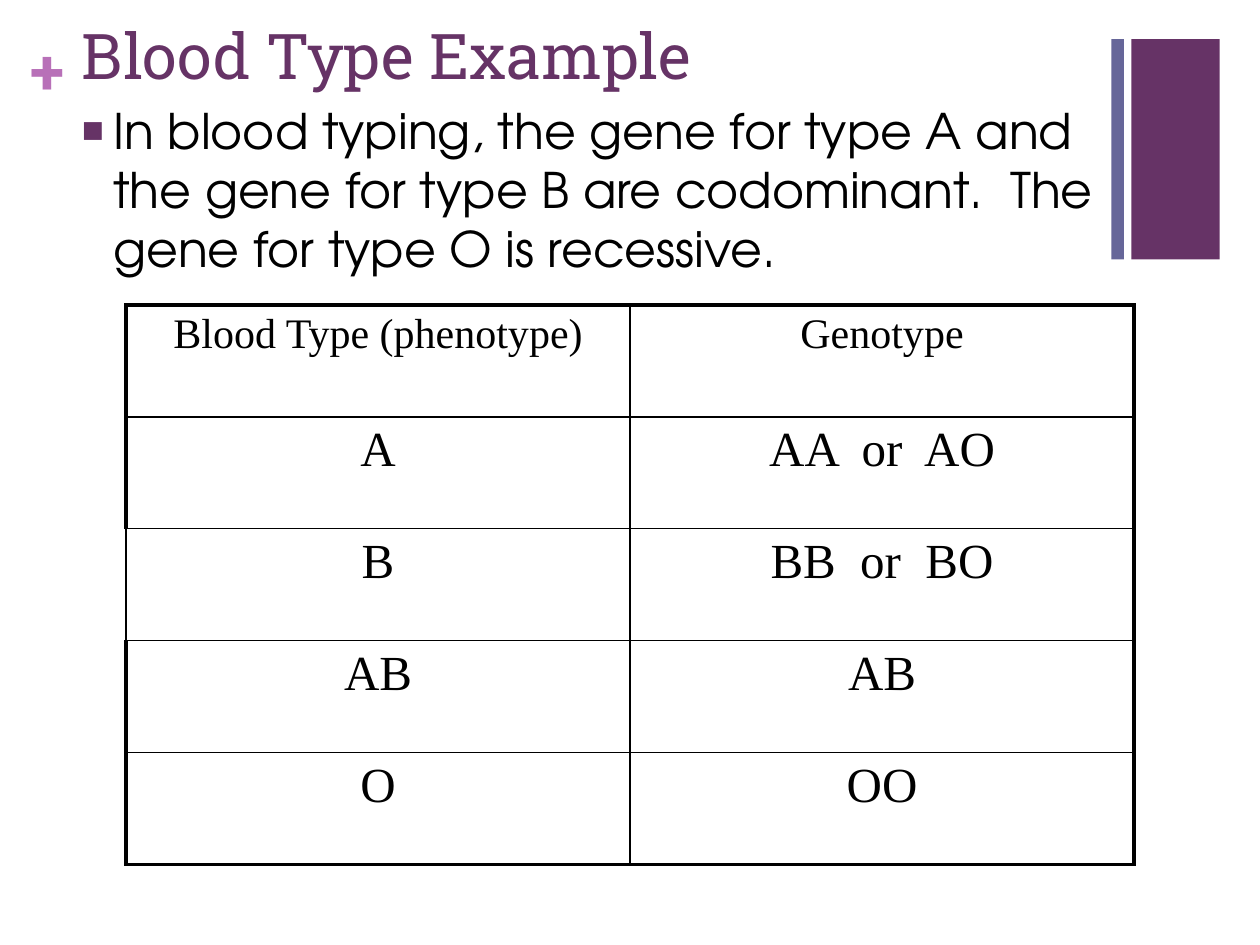
from lxml import etree
from pptx import Presentation
from pptx.dml.color import RGBColor
from pptx.enum.shapes import MSO_SHAPE
from pptx.enum.text import MSO_ANCHOR, MSO_AUTO_SIZE, PP_ALIGN
from pptx.oxml.ns import qn
from pptx.util import Inches, Pt

PURPLE, SLATE, ORCHID, BLACK = "663366", "666699", "B870B8", "000000"
HEADING_FONT, BODY_FONT, TABLE_FONT = "Roboto Slab", "TeX Gyre Adventor", "Times New Roman"
THIN, THICK = 1, 2.25

BLOOD_TYPES = [
    ("Blood Type (phenotype)", "Genotype"),
    ("A", "AA  or  AO"),
    ("B", "BB  or  BO"),
    ("AB", "AB"),
    ("O", "OO"),
]


def color(hex_value):
    return RGBColor.from_string(hex_value)


def write(frame, text, *, size, font, fill=BLACK, bold=False,
          align=PP_ALIGN.LEFT, before=0):
    frame.word_wrap = True
    paragraph = frame.paragraphs[0]
    paragraph.alignment = align
    paragraph.space_before = Pt(before)
    run = paragraph.add_run()
    run.text = text
    run.font.size = Pt(size)
    run.font.name = font
    run.font.bold = bold
    run.font.color.rgb = color(fill)
    return paragraph


def place(part, left, top, width, height):
    part.left, part.top = Inches(left), Inches(top)
    part.width, part.height = Inches(width), Inches(height)


def add_square_bullet(paragraph, hex_value, percent, indent):
    properties = paragraph._p.get_or_add_pPr()
    properties.set("marL", str(Inches(indent)))
    properties.set("indent", str(-Inches(indent)))
    bullet_color = etree.SubElement(properties, qn("a:buClr"))
    etree.SubElement(bullet_color, qn("a:srgbClr"), val=hex_value)
    etree.SubElement(properties, qn("a:buSzPct"), val=str(percent * 1000))
    etree.SubElement(properties, qn("a:buChar"), char="■")


def set_borders(cell, **widths):
    properties = cell._tc.get_or_add_tcPr()
    for position, side in enumerate("LRTB"):
        line = etree.Element(qn(f"a:ln{side}"), w=str(Pt(widths[side])))
        fill = etree.SubElement(line, qn("a:solidFill"))
        etree.SubElement(fill, qn("a:srgbClr"), val=BLACK)
        properties.insert(position, line)


def add_corner_bars(slide, left, top, width, height):
    # Narrow slate bar, then the wide purple one
    for offset, bar_width, fill in ((0, 0.1, SLATE), (0.16, width - 0.16, PURPLE)):
        bar = slide.shapes.add_shape(
            MSO_SHAPE.RECTANGLE, Inches(left + offset), Inches(top),
            Inches(bar_width), Inches(height))
        bar.shadow.inherit = False
        bar.fill.solid()
        bar.fill.fore_color.rgb = color(fill)
        bar.line.fill.background()


def add_plus_sign(slide, left, top, width, height):
    plus = slide.shapes.add_textbox(
        Inches(left), Inches(top), Inches(width), Inches(height)).text_frame
    plus.margin_left = plus.margin_right = plus.margin_top = plus.margin_bottom = 0
    write(plus, "+", size=36, font=HEADING_FONT, fill=ORCHID, bold=True)


def fill_heading(slide, left, top, width, height):
    heading = slide.shapes.title
    place(heading, left, top, width, height)
    frame = heading.text_frame
    frame.auto_size = MSO_AUTO_SIZE.NONE
    frame.vertical_anchor = MSO_ANCHOR.TOP
    write(frame, "Blood Type Example", size=36, font=HEADING_FONT, fill=PURPLE)


def fill_explanation(slide, left, top, width, height):
    explanation = slide.placeholders[1]
    place(explanation, left, top, width, height)
    frame = explanation.text_frame
    frame.auto_size = MSO_AUTO_SIZE.NONE
    paragraph = write(
        frame,
        "In blood typing, the gene for type A and the gene for type B are "
        "codominant.  The gene for type O is recessive.",
        size=28, font=BODY_FONT, before=20)
    add_square_bullet(paragraph, PURPLE, percent=75, indent=0.25)


def add_genotype_table(slide, left, top, width, height):
    row_count, column_count = len(BLOOD_TYPES), len(BLOOD_TYPES[0])
    table = slide.shapes.add_table(
        row_count, column_count, Inches(left), Inches(top),
        Inches(width), Inches(height)).table
    table.first_row = table.horz_banding = False
    for r, row in enumerate(BLOOD_TYPES):
        size = 24 if r == 0 else 28
        for c, text in enumerate(row):
            cell = table.cell(r, c)
            cell.fill.background()
            write(cell.text_frame, text, size=size, font=TABLE_FONT,
                  align=PP_ALIGN.CENTER, before=size * 0.2)
            # Thick outer frame, except left of the type B row
            set_borders(
                cell,
                L=THICK if c == 0 and row[0] != "B" else THIN,
                R=THICK if c == column_count - 1 else THIN,
                T=THICK if r == 0 else THIN,
                B=THICK if r == row_count - 1 else THIN)


def main():
    deck = Presentation()
    deck.slide_width, deck.slide_height = Inches(10), Inches(7.5)
    slide = deck.slides.add_slide(deck.slide_layouts[1])
    add_corner_bars(slide, 8.82, 0.31, 0.86, 1.75)
    add_plus_sign(slide, 0.24, 0.25, 0.29, 0.61)
    fill_heading(slide, 0.55, 0.08, 8.26, 1.22)
    fill_explanation(slide, 0.55, 0.75, 8.26, 5.28)
    add_genotype_table(slide, 1, 2.42, 8, 4.44)
    deck.save("out.pptx")


if __name__ == "__main__":
    main()
